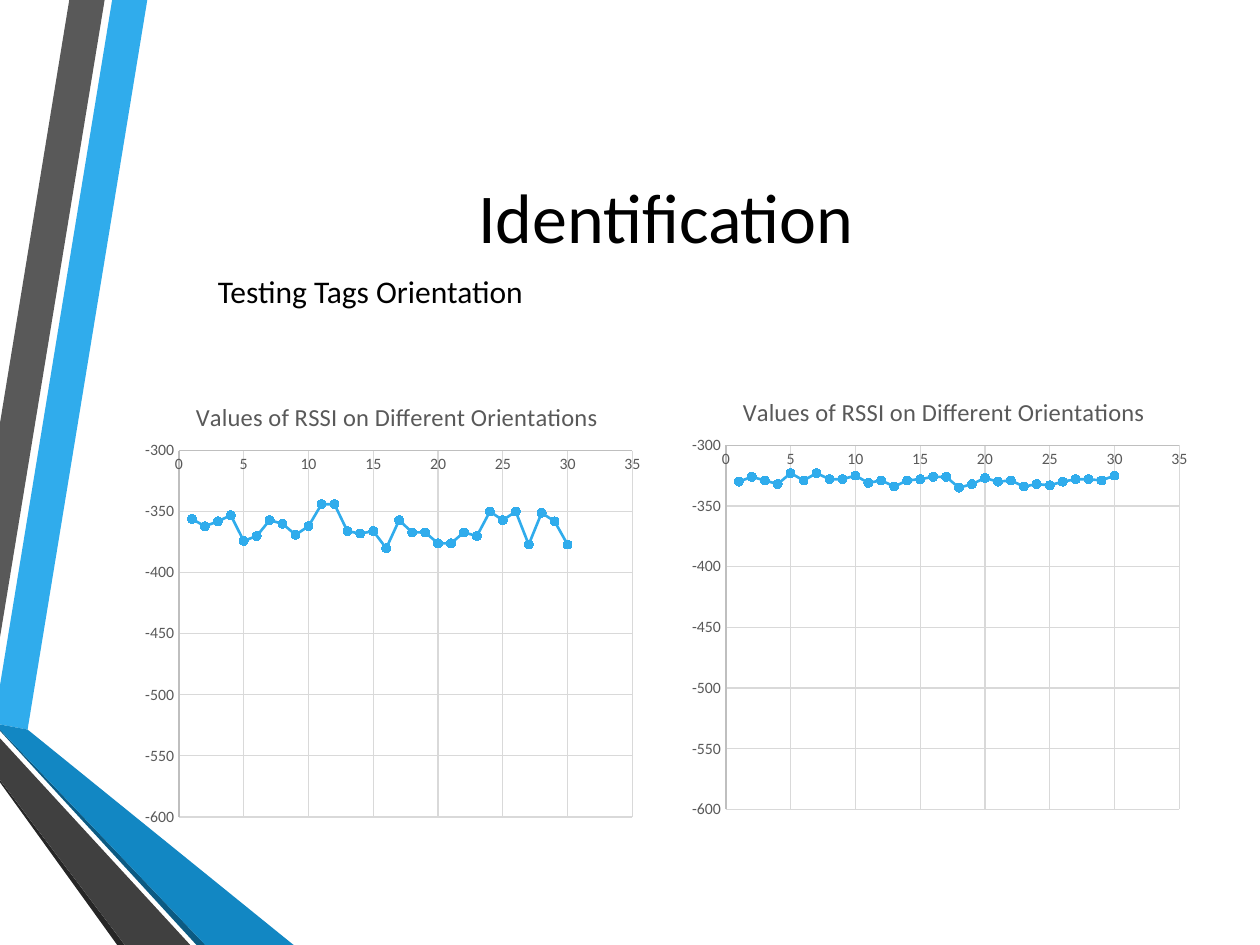
from lxml import etree
from pptx import Presentation
from pptx.chart.data import XyChartData
from pptx.dml.color import RGBColor
from pptx.enum import chart as ch, text as tx
from pptx.oxml.ns import qn
from pptx.util import Pt

FONT = "Calibri"
BLACK = RGBColor(0, 0, 0)
BLUE = RGBColor(0x30, 0xAC, 0xEC)
MID = RGBColor(0x12, 0x87, 0xC3)
NAVY = RGBColor(0x0C, 0x5A, 0x82)
GREY = RGBColor(0x59, 0x59, 0x59)
DARK = RGBColor(0x40, 0x40, 0x40)
COAL = RGBColor(0x26, 0x26, 0x26)
AXIS = RGBColor(0xBF, 0xBF, 0xBF)
GRID = RGBColor(0xD9, 0xD9, 0xD9)

BANDS = [
    (BLUE, [(0, 391.7), (0, 414), (15.8, 416.9), (84.2, 0), (64.1, 0)]),
    (GREY, [(59.8, 0), (39.6, 0), (0, 241.9), (0, 364.3)]),
    (COAL, [(0, 445.7), (0, 447.1), (67, 540), (71.3, 540)]),
    (NAVY, [(0, 416.9), (0, 417.6), (112.3, 540), (117.4, 540)]),
    (MID, [(0, 416.9), (117.4, 540), (167.8, 540), (15.8, 416.9), (0, 414)]),
    (DARK, [(0, 445.7), (71.3, 540), (108.7, 540), (0, 421.9)]),
]
LEFT = [-356, -362, -358, -353, -374, -370, -357, -360, -369, -362,
        -344, -344, -366, -368, -366, -380, -357, -367, -367, -376,
        -376, -367, -370, -350, -357, -350, -377, -351, -358, -377]
RIGHT = [-330, -326, -329, -332, -323, -329, -323, -328, -328, -325,
         -331, -329, -334, -329, -328, -326, -326, -335, -332, -327,
         -330, -329, -334, -332, -333, -330, -328, -328, -329, -325]


def style(font, size, color):
    font.name, font.size, font.bold = FONT, Pt(size), False
    font.color.rgb = color


def add_band(slide, color, pts):
    first, *rest = [(Pt(x), Pt(y)) for x, y in pts]
    pen = slide.shapes.build_freeform(*first)
    pen.add_line_segments(rest, close=True)
    band = pen.convert_to_shape()
    band.shadow.inherit = False
    band.fill.solid()
    band.fill.fore_color.rgb = color
    band.line.fill.background()


def add_text(slide, words, box, size, align, anchor):
    frame = slide.shapes.add_textbox(*map(Pt, box)).text_frame
    frame.word_wrap = True
    frame.vertical_anchor = anchor
    para = frame.paragraphs[0]
    para.text = words
    para.alignment = align
    style(para.runs[0].font, size, BLACK)


def place(node, index, **parts):
    """Give a chart part a fixed layout, in fractions of the chart."""
    for old in node.findall(qn("c:layout")):
        node.remove(old)
    layout = etree.Element(qn("c:layout"))
    node.insert(index, layout)
    manual = etree.SubElement(layout, qn("c:manualLayout"))
    if "w" in parts:
        etree.SubElement(manual, qn("c:layoutTarget")).set("val", "inner")
    for key in "xy":
        etree.SubElement(manual, qn(f"c:{key}Mode")).set("val", "edge")
    for key, part in parts.items():
        etree.SubElement(manual, qn(f"c:{key}")).set("val", str(part))


def set_axis(axis, low, high, step):
    axis.minimum_scale, axis.maximum_scale = low, high
    axis.major_unit = step
    axis.major_tick_mark = axis.minor_tick_mark = ch.XL_TICK_MARK.NONE
    axis.tick_label_position = ch.XL_TICK_LABEL_POSITION.NEXT_TO_AXIS
    axis.has_major_gridlines = True
    style(axis.tick_labels.font, 9, GREY)
    for line, color in ((axis.format.line, AXIS),
                        (axis.major_gridlines.format.line, GRID)):
        line.color.rgb = color
        line.width = Pt(0.75)


def add_plot(slide, box, vals):
    data = XyChartData()
    row = data.add_series("Series 1")
    for x, y in enumerate(vals, 1):
        row.add_data_point(x, y)
    chart = slide.shapes.add_chart(
        ch.XL_CHART_TYPE.XY_SCATTER_SMOOTH, *map(Pt, box), data).chart
    style(chart.font, 10, BLACK)
    chart.has_legend = False
    chart.has_title = True
    frame = chart.chart_title.text_frame
    frame.text = "Values of RSSI on Different Orientations"
    style(frame.paragraphs[0].runs[0].font, 14, GREY)
    chart.chart_title.include_in_layout = False
    place(frame._txBody.getparent().getparent(), 1, x=0.11, y=0.05)
    place(chart._chartSpace.chart.plotArea, 0,
          x=0.086, y=0.168, w=0.88, h=0.79)
    set_axis(chart.category_axis, 0, 35, 5)
    set_axis(chart.value_axis, -600, -300, 50)
    chart.plots[0].vary_by_categories = False
    line = chart.plots[0].series[0]
    line.smooth = True
    line.format.line.color.rgb = BLUE
    line.format.line.width = Pt(1.5)
    mark = line.marker
    mark.style, mark.size = ch.XL_MARKER_STYLE.CIRCLE, 5
    mark.format.fill.solid()
    mark.format.fill.fore_color.rgb = BLUE
    mark.format.line.color.rgb = BLUE


def main():
    prs = Presentation()
    prs.slide_width, prs.slide_height = Pt(720), Pt(540)
    slide = prs.slides.add_slide(prs.slide_layouts[6])
    for color, pts in BANDS:
        add_band(slide, color, pts)
    add_text(slide, "Identification", (77, 54, 607, 138), 40,
             tx.PP_ALIGN.CENTER, tx.MSO_ANCHOR.MIDDLE)
    add_plot(slide, (77, 213, 294.5, 265), LEFT)
    add_plot(slide, (389.5, 210.2, 294.5, 263.5), RIGHT)
    add_text(slide, "Testing Tags Orientation", (117.4, 152, 432.7, 29), 18,
             tx.PP_ALIGN.LEFT, tx.MSO_ANCHOR.TOP)
    prs.save("out.pptx")


if __name__ == "__main__":
    main()
